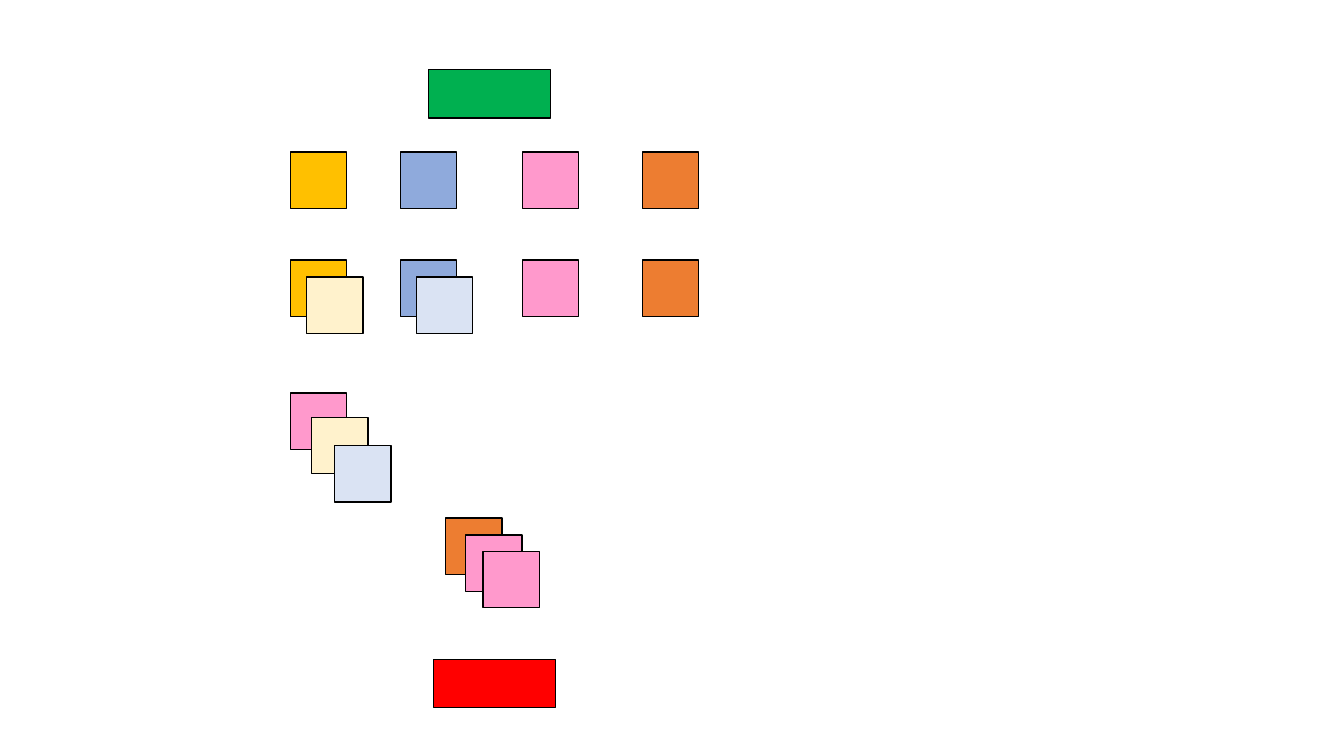
from pptx import Presentation
from pptx import util as u
from pptx.dml.color import RGBColor
from pptx.enum import shapes

GREEN, RED, BLACK = "00B050", "FF0000", "000000"
YELLOW, BLUE, PINK, ORANGE = "FFC000", "8FAADC", "FF99CC", "ED7D31"
PALE_YELLOW, PALE_BLUE = "FFF2CC", "DAE3F3"
SQUARE = 0.56

deck = Presentation()
deck.slide_width, deck.slide_height = u.Inches(13.33), u.Inches(7.5)
slide = deck.slides.add_slide(deck.slide_layouts[6])


def rgb(color):
    return RGBColor.from_string(color)


def add_block(left, top, color, width=SQUARE, height=SQUARE):
    block = slide.shapes.add_shape(
        shapes.MSO_SHAPE.RECTANGLE,
        u.Inches(left), u.Inches(top), u.Inches(width), u.Inches(height))
    block.shadow.inherit = False
    block.fill.solid()
    block.fill.fore_color.rgb = rgb(color)
    block.line.color.rgb = rgb(BLACK)
    block.line.width = u.Pt(1)


# Start bar
add_block(4.25, 0.69, GREEN, 1.21, 0.48)

# Two rows of the same four colours
columns = [(2.88, YELLOW), (3.97, BLUE), (5.18, PINK), (6.37, ORANGE)]
for row_top in (1.51, 2.58):
    for left, color in columns:
        add_block(left, row_top, color)

# Pale squares overlapping the second row
for (left, _), pale in zip(columns, (PALE_YELLOW, PALE_BLUE)):
    add_block(left + 0.16, 2.75, pale)

# Stacks of three, back to front
mixed_stack = [(2.88, 3.9, PINK), (3.09, 4.14, PALE_YELLOW), (3.32, 4.42, PALE_BLUE)]
pink_stack = [(4.42, 5.14, ORANGE), (4.62, 5.31, PINK), (4.79, 5.47, PINK)]
for left, top, color in mixed_stack + pink_stack:
    add_block(left, top, color)

# End bar
add_block(4.3, 6.54, RED, 1.21, 0.48)

deck.save("out.pptx")
